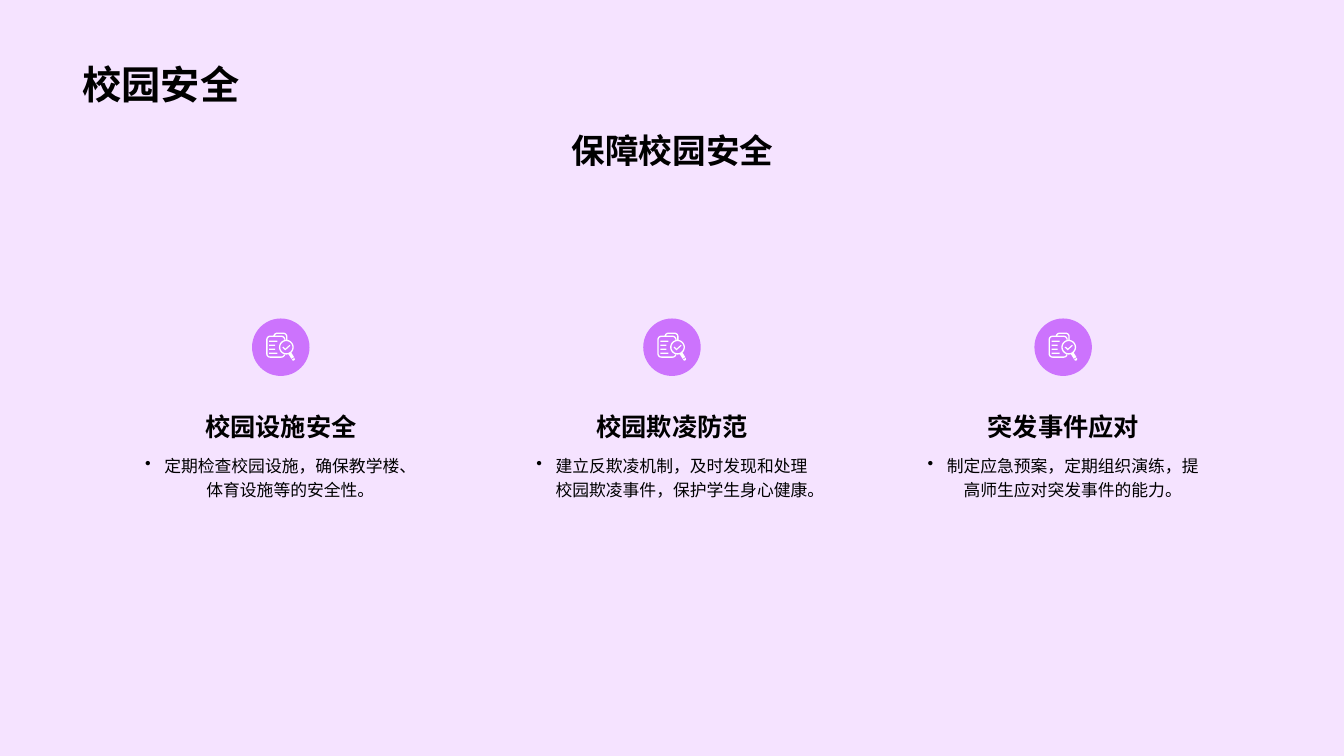
"""Build the campus safety slide with three icon columns."""
from dataclasses import dataclass
from math import cos, radians, sin

from lxml.etree import SubElement
from pptx import Presentation
from pptx.dml.color import RGBColor as Color
from pptx.enum.shapes import MSO_SHAPE as Shape
from pptx.enum.text import MSO_ANCHOR as Anchor, PP_ALIGN as Align
from pptx.oxml.ns import qn
from pptx.util import Inches, Pt


@dataclass(frozen=True)
class Theme:
    """Colours, font and type sizes of the deck."""
    background: Color = Color.from_string("F5E3FF")
    accent: Color = Color.from_string("CC73FD")
    icon: Color = Color.from_string("FFFFFF")
    ink: Color = Color.from_string("000000")
    font: str = "Arial"
    title: int = 28
    subtitle: int = 24
    heading: int = 18
    body: int = 12


THEME = Theme()
WIDTH, HEIGHT = 13.33, 7.5
COLUMN_PITCH, COLUMN_WIDTH = 3.88, 2.95
BADGE_TOP, BADGE_SIZE = 3.16, 0.57
HEADING_TOP, HEADING_HEIGHT, BODY_HEIGHT = 3.99, 0.44, 1.56
ICON_INSET = 0.14
ICON_STEPS = 100
ITEMS = (
    ("校园设施安全", "定期检查校园设施，确保教学楼、体育设施等的安全性。"),
    ("校园欺凌防范", "建立反欺凌机制，及时发现和处理校园欺凌事件，保护学生身心健康。"),
    ("突发事件应对", "制定应急预案，定期组织演练，提高师生应对突发事件的能力。"),
)


def arc(x, y, radius, start, end, steps=8):
    """Return points along a circular arc, in degrees clockwise from the right."""
    angles = [radians(start + (end - start) * i / steps) for i in range(steps + 1)]
    return [(x + radius * cos(a), y + radius * sin(a)) for a in angles]


def icon_contours():
    """Return the clipboard and magnifier outlines in hundredths of an inch."""
    outer, inner = 4, 2.7
    clipboard = [
        (18, 22), *arc(15, 21, outer, 15, 90), *arc(4, 21, outer, 90, 180),
        *arc(4, 7, outer, 180, 270), (7, 3), *arc(11, 4, outer, 190, 270),
        *arc(17, 4, outer, 270, 360), (21, 7), (19.7, 7),
        *arc(17, 4, inner, 360, 270), *arc(11, 4, inner, 270, 200),
        *arc(15, 7, outer, 270, 360), *arc(15, 7, inner, 360, 270),
        *arc(4, 7, inner, 270, 180), *arc(4, 21, inner, 180, 90),
        *arc(15, 21, inner, 90, 20),
    ]
    lens = [arc(20, 14.5, 7.3, 0, 360, 40), arc(20, 14.5, 6, 360, 0, 40)]
    handle = [(25, 20), (22.3, 21.7), (25, 26), (27.7, 24.3)]
    tip = [(28.2, 25), (25.4, 26.8), (26.3, 27.8), (27.5, 27.8), (28.4, 26.8)]
    tick = [(19, 16), (17, 14), (16, 14.8), (19, 17.6), (24, 13), (23.2, 12.2)]
    rows = [
        [(3, y), (right, y), (right, y + 1.2), (3, y + 1.2)]
        for y, right in ((8, 11), (12, 9), (16, 9), (20, 11))
    ]
    return [clipboard, *lens, handle, tip, tick, *rows]


def paint(shape, color):
    """Fill a shape with one colour, without outline or shadow."""
    shape.fill.solid()
    shape.fill.fore_color.rgb = color
    shape.line.fill.background()
    shape.shadow.inherit = False


def write(box, text, size, bold=True, align=Align.CENTER, anchor=Anchor.TOP):
    """Put one styled paragraph in a box and return it."""
    frame = box.text_frame
    frame.word_wrap = True
    frame.vertical_anchor = anchor
    para = frame.paragraphs[0]
    para.text = text
    para.alignment = align
    font = para.font
    font.name, font.size, font.bold = THEME.font, Pt(size), bold
    font.color.rgb = THEME.ink
    return para


def add_text(shapes, left, top, width, height, *content, **style):
    """Add a text box measured in inches and return its paragraph."""
    box = shapes.add_textbox(*map(Inches, (left, top, width, height)))
    return write(box, *content, **style)


def add_bullet(para, indent=0.19):
    """Give a paragraph a round bullet with a hanging indent."""
    props = para._p.get_or_add_pPr()
    props.set("marL", str(Inches(indent)))
    props.set("indent", str(-Inches(indent)))
    bullet = SubElement(props, qn("a:buChar"))
    bullet.set("char", "•")
    defaults = props.find(qn("a:defRPr"))
    if defaults is not None:
        defaults.addprevious(bullet)


def add_icon(shapes, left, top):
    """Draw the white clipboard icon as one freeform."""
    builder = shapes.build_freeform(0, 0, scale=Inches(0.01) / ICON_STEPS)
    for contour in icon_contours():
        first, *rest = [(x * ICON_STEPS, y * ICON_STEPS) for x, y in contour]
        builder.move_to(*first)
        builder.add_line_segments(rest, close=True)
    paint(builder.convert_to_shape(Inches(left), Inches(top)), THEME.icon)


def add_item(slide, center, heading, body):
    """Add one column: badge, icon, heading and bulleted text."""
    shapes = slide.shapes.add_group_shape().shapes
    badge_left = center - BADGE_SIZE / 2
    badge = shapes.add_shape(
        Shape.OVAL, *map(Inches, (badge_left, BADGE_TOP, BADGE_SIZE, BADGE_SIZE)))
    paint(badge, THEME.accent)
    add_icon(shapes, badge_left + ICON_INSET, BADGE_TOP + ICON_INSET)
    left = center - COLUMN_WIDTH / 2
    para = add_text(shapes, left, HEADING_TOP + HEADING_HEIGHT, COLUMN_WIDTH,
                    BODY_HEIGHT, body, THEME.body, bold=False)
    para.line_spacing = 1.2
    add_bullet(para)
    add_text(shapes, left, HEADING_TOP, COLUMN_WIDTH, HEADING_HEIGHT,
             heading, THEME.heading, anchor=Anchor.BOTTOM)


def add_title(slide, text):
    """Place and format the title placeholder."""
    title = slide.shapes.title
    title.left, title.top, title.width, title.height = map(
        Inches, (0.72, 0.14, 11.88, 0.98))
    para = write(title, text, THEME.title, align=Align.LEFT, anchor=Anchor.BOTTOM)
    para.line_spacing = 0.9


def main():
    """Build and save the deck."""
    deck = Presentation()
    deck.slide_width, deck.slide_height = Inches(WIDTH), Inches(HEIGHT)
    slide = deck.slides.add_slide(deck.slide_layouts.get_by_name("Title Only"))
    slide.background.fill.solid()
    slide.background.fill.fore_color.rgb = THEME.background
    add_title(slide, "校园安全")
    for column, (heading, body) in enumerate(ITEMS):
        add_item(slide, WIDTH / 2 + (column - 1) * COLUMN_PITCH, heading, body)
    add_text(slide.shapes, 0.74, 1.24, 11.86, 1.32, "保障校园安全", THEME.subtitle)
    deck.save("out.pptx")


if __name__ == "__main__":
    main()
